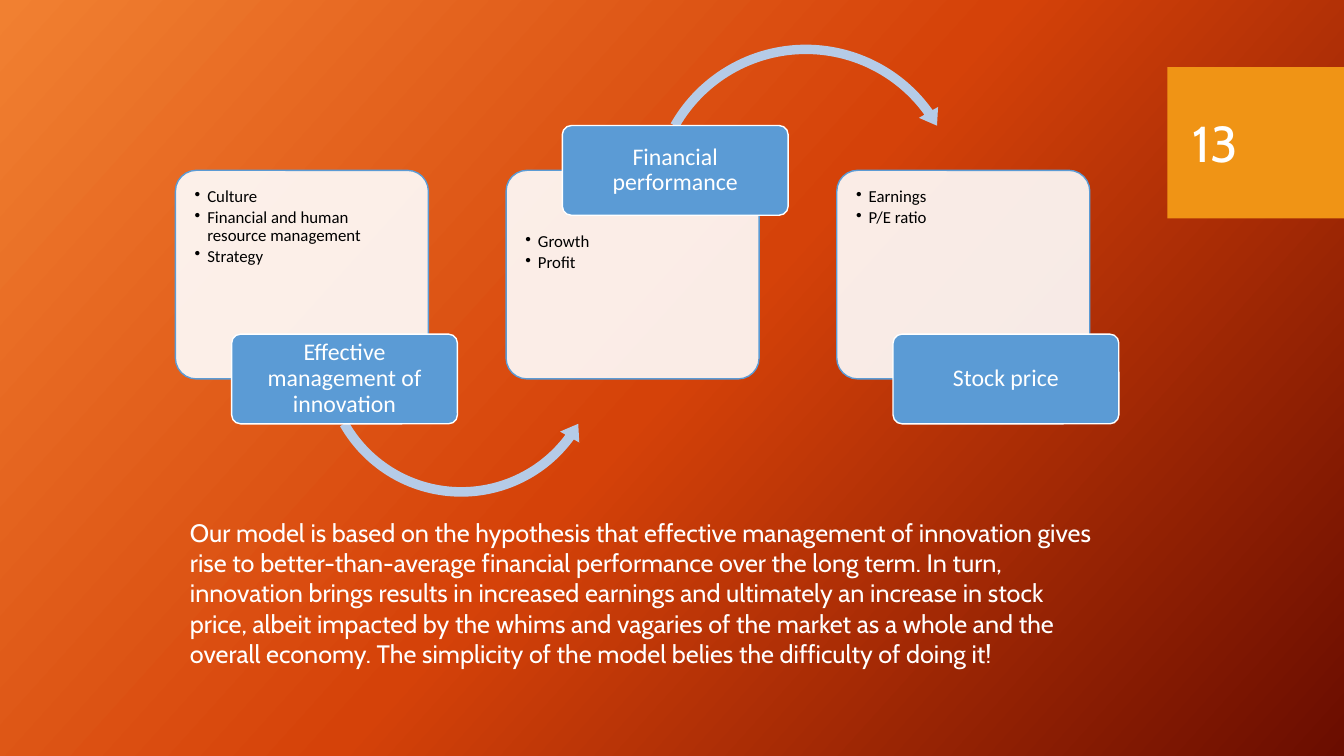
from copy import deepcopy

from pptx import Presentation
from pptx import util as u
from pptx.dml.color import RGBColor
from pptx.enum import shapes, text
from pptx.oxml import parse_xml
from pptx.oxml.ns import nsdecls

WHITE = RGBColor(0xFF, 0xFF, 0xFF)
BLACK = RGBColor(0x00, 0x00, 0x00)
BLUE = RGBColor(0x5B, 0x9B, 0xD5)
PALE_BLUE = RGBColor(0xB5, 0xCB, 0xE7)
AMBER = RGBColor(0xF0, 0x94, 0x15)
BACKDROP = [
    (0, RGBColor(0xF1, 0x80, 0x31)),
    (0.5, RGBColor(0xD5, 0x42, 0x09)),
    (1, RGBColor(0x6A, 0x0D, 0x00)),
]

CARD_LEFT, CARD_TOP, CARD_STEP = 125.3, 121.7, 236.2
CARD_W, CARD_H = 180.7, 149
LABEL_W, LABEL_H, LABEL_SHIFT = 161.3, 64.1, 40.2
ROUNDING = 0.1

SHAPE = shapes.MSO_SHAPE
MIDDLE = text.MSO_ANCHOR.MIDDLE

# label, bullets, whether the label sits on top, arrow to the next stage
STAGES = [
    ("Effective management of innovation",
     ["Culture", "Financial and human resource management", "Strategy"], False,
     (SHAPE.LEFT_CIRCULAR_ARROW, 225.4, 151.2, 208.1,
      [0.033, 4.04, 21.796, 90.245, 0.038])),
    ("Financial performance", ["Growth", "Profit"], True,
     (SHAPE.CIRCULAR_ARROW, 460.1, 27.4, 231.1,
      [0.029, 3.597, 194.648, 125.755, 0.034])),
    ("Stock price", ["Earnings", "P/E ratio"], False, None),
]

MODEL_SUMMARY = (
    "Our model is based on the hypothesis that effective management of innovation "
    "gives rise to better-than-average financial performance over the long term. "
    "In turn, innovation brings results in increased earnings and ultimately an "
    "increase in stock price, albeit impacted by the whims and vagaries of the "
    "market as a whole and the overall economy. The simplicity of the model belies "
    "the difficulty of doing it!"
)


class Deck:
    heading_font = "Cabin"
    diagram_font = "Calibri"

    def __init__(self):
        self.prs = Presentation()
        self.prs.slide_width, self.prs.slide_height = u.Pt(960), u.Pt(540)
        self.slide = self.prs.slides.add_slide(self.prs.slide_layouts[6])

    def backdrop(self, stops, angle):
        """Fill the background with a linear gradient; angle runs clockwise."""
        fill = self.slide.background.fill
        fill.gradient()
        fill.gradient_angle = 360 - angle
        stop_list = self.slide.element.xpath(".//a:gsLst")[0]
        stop_list.insert(1, deepcopy(stop_list[0]))
        for stop, (position, colour) in zip(fill.gradient_stops, stops):
            stop.position = position
            stop.color.rgb = colour

    def shape(self, kind, left, top, width, height, fill, line=None, adjust=()):
        shape = self.slide.shapes.add_shape(
            kind, u.Pt(left), u.Pt(top), u.Pt(width), u.Pt(height))
        shape.shadow.inherit = False
        shape.fill.solid()
        shape.fill.fore_color.rgb = fill
        if line is None:
            shape.line.fill.background()
        else:
            shape.line.color.rgb = line
            shape.line.width = u.Pt(1)
        for i, value in enumerate(adjust):
            shape.adjustments[i] = value
        return shape

    def frame(self, shape, side, top, bottom, anchor):
        frame = shape.text_frame
        frame.word_wrap = True
        frame.margin_left = frame.margin_right = u.Pt(side)
        frame.margin_top, frame.margin_bottom = u.Pt(top), u.Pt(bottom)
        frame.vertical_anchor = anchor
        return frame

    def add_words(self, paragraph, words, font, size, colour,
                  align=text.PP_ALIGN.LEFT):
        paragraph.alignment = align
        run = paragraph.add_run()
        run.text = words
        run.font.name = font
        run.font.size = u.Pt(size)
        run.font.color.rgb = colour

    def card(self, left, bullets, text_top):
        card = self.shape(SHAPE.ROUNDED_RECTANGLE, left, CARD_TOP, CARD_W, CARD_H,
                          WHITE, BLUE, [ROUNDING])
        colour = card.element.xpath("./p:spPr/a:solidFill/a:srgbClr")[0]
        colour.append(parse_xml(f'<a:alpha {nsdecls("a")} val="90000"/>'))
        frame = self.frame(card, 9.4, text_top, 8.6, text.MSO_ANCHOR.TOP)
        for i, item in enumerate(bullets):
            paragraph = frame.add_paragraph() if i else frame.paragraphs[0]
            paragraph.line_spacing = 0.9
            paragraph.space_after = u.Pt(1.8)
            props = paragraph._p.get_or_add_pPr()
            props.set("marL", str(u.Pt(9)))
            props.set("indent", str(u.Pt(-9)))
            props.append(parse_xml(f'<a:buChar {nsdecls("a")} char="•"/>'))
            self.add_words(paragraph, item, self.diagram_font, 12, BLACK)

    def label(self, left, top, words):
        label = self.shape(SHAPE.ROUNDED_RECTANGLE, left, top, LABEL_W, LABEL_H,
                           BLUE, WHITE, [ROUNDING])
        paragraph = self.frame(label, 3.1, 1.4, 1.4, MIDDLE).paragraphs[0]
        paragraph.line_spacing = 0.9
        self.add_words(paragraph, words, self.diagram_font, 17, WHITE,
                       text.PP_ALIGN.CENTER)

    def page_number(self, number):
        tab = self.shape(SHAPE.RECTANGLE, 833.8, 48, 126.2, 108, AMBER)
        frame = self.frame(tab, 18, 3.6, 3.6, MIDDLE)
        self.add_words(frame.paragraphs[0], number, self.heading_font, 36, WHITE)

    def body(self, left, top, width, height, words):
        box = self.slide.shapes.add_textbox(
            u.Pt(left), u.Pt(top), u.Pt(width), u.Pt(height))
        frame = self.frame(box, 7.2, 3.6, 3.6, text.MSO_ANCHOR.TOP)
        self.add_words(frame.paragraphs[0], words, self.heading_font, 18, WHITE)


def main():
    deck = Deck()
    deck.backdrop(BACKDROP, 42)
    deck.page_number("13")
    for i, (name, bullets, label_on_top, arrow) in enumerate(STAGES):
        left = CARD_LEFT + i * CARD_STEP
        edge = CARD_TOP if label_on_top else CARD_TOP + CARD_H
        deck.card(left, bullets, 8.6 + (LABEL_H / 2 if label_on_top else 0))
        if arrow:
            kind, arrow_left, arrow_top, size, bend = arrow
            deck.shape(kind, arrow_left, arrow_top, size, size, PALE_BLUE,
                       adjust=bend)
        deck.label(left + LABEL_SHIFT, edge - LABEL_H / 2, name)
    deck.body(128.6, 365.8, 661, 138.2, MODEL_SUMMARY)
    deck.prs.save("out.pptx")


if __name__ == "__main__":
    main()
